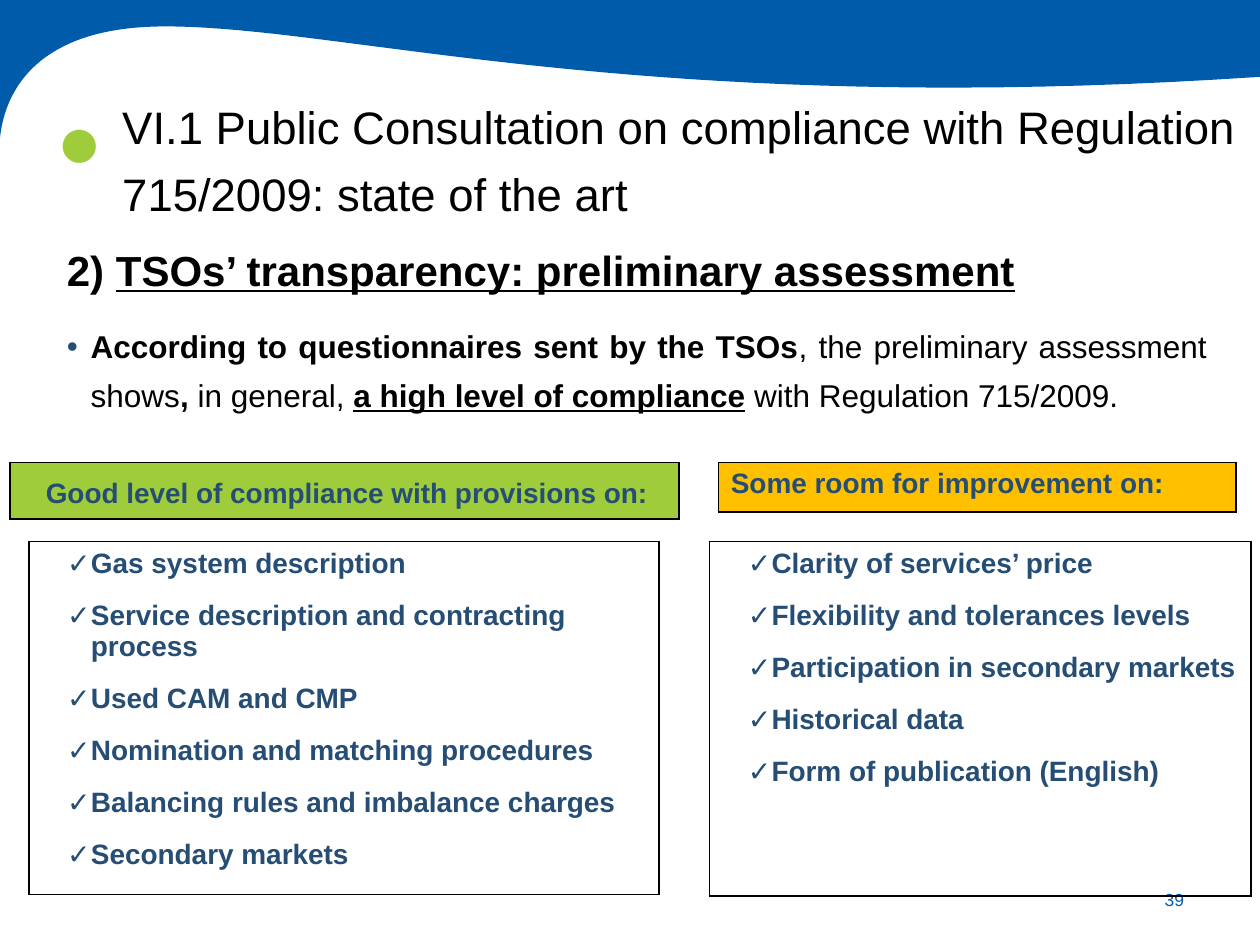
"""Build the slide on the preliminary assessment of TSOs' transparency."""
import pptx
import pptx.dml.color
import pptx.enum.text
import pptx.oxml.ns
import pptx.util
from lxml import etree

Cm = pptx.util.Cm
Pt = pptx.util.Pt
RGBColor = pptx.dml.color.RGBColor
Align = pptx.enum.text.PP_ALIGN
Anchor = pptx.enum.text.MSO_ANCHOR

BLUE = RGBColor(0x00, 0x5B, 0xAB)
NAVY = RGBColor(0x26, 0x4D, 0x74)
GREEN = RGBColor(0x9E, 0xCC, 0x3B)
AMBER = RGBColor(0xFF, 0xC0, 0x00)
BLACK = RGBColor(0x00, 0x00, 0x00)

TITLE = "VI.1 Public Consultation on compliance with Regulation 715/2009: state of the art"
PAGE_NUMBER = "39"
HEADING = [("2) ", True, False), ("TSOs’ transparency: preliminary assessment", True, True)]
STATEMENT = [
    ("According to questionnaires sent by the TSOs", True, False),
    (", the preliminary assessment shows", False, False),
    (", ", True, False),
    ("in general, ", False, False),
    ("a high level of compliance", True, True),
    (" with Regulation 715/2009.", False, False),
]
GOOD = [
    "Gas system description",
    "Service description and contracting process",
    "Used CAM and CMP",
    "Nomination and matching procedures",
    "Balancing rules and imbalance charges",
    "Secondary markets",
]
IMPROVABLE = [
    "Clarity of services’ price",
    "Flexibility and tolerances levels",
    "Participation in secondary markets",
    "Historical data",
    "Form of publication (English)",
]
HEADER_TOP, LIST_TOP = 9.32, 10.92
HEADERS = [
    ("Good level of compliance with provisions on:", GREEN, (0.2, HEADER_TOP, 13.49, 1.14),
     dict(left=1, hanging=0.53, spacing=1.3)),
    ("Some room for improvement on:", AMBER, (14.48, HEADER_TOP, 10.44, 1), {}),
]
LISTS = [
    (GOOD, (0.58, LIST_TOP, 12.7, 7.11)),
    (IMPROVABLE, (14.3, LIST_TOP, 10.92, 7.14)),
]
CURVES = [
    ((10, 0.61), (5.1, 0.94), (2.76, 0.21), (1.31, 0.21)),
    ((1.31, 0.21), (0.23, 0.21), (0.03, 0.79), (0, 1.1)),
]
CURVE_STEPS = 40


def curve_points(curve):
    for step in range(1, CURVE_STEPS + 1):
        t = step / CURVE_STEPS
        weights = ((1 - t) ** 3, 3 * t * (1 - t) ** 2, 3 * t * t * (1 - t), t ** 3)
        yield tuple(Cm(2.54 * sum(w * point[axis] for w, point in zip(weights, curve)))
                    for axis in (0, 1))


def add_element(parent, tag, **attributes):
    return etree.SubElement(parent, pptx.oxml.ns.qn(tag), attributes)


def format_paragraph(paragraph, size, color, bold=None, bullet=None, left=0, hanging=0,
                     spacing=None, before=0, after=0, align=Align.LEFT):
    properties = paragraph._p.get_or_add_pPr()
    properties.set("marL", str(Cm(left)))
    properties.set("indent", str(-Cm(hanging)))
    if bullet:
        add_element(add_element(properties, "a:buClr"), "a:srgbClr", val=str(NAVY))
        add_element(properties, "a:buFont", typeface="Arial")
        add_element(properties, "a:buChar", char=bullet)
    else:
        add_element(properties, "a:buNone")
    paragraph.alignment = align
    paragraph.line_spacing = spacing
    paragraph.space_before, paragraph.space_after = Pt(before), Pt(after)
    font = paragraph.font
    font.name, font.size, font.bold = "Arial", Pt(size), bold
    font.color.rgb = color


def add_runs(paragraph, runs):
    for text, bold, underline in runs:
        run = paragraph.add_run()
        run.text, run.font.bold, run.font.underline = text, bold, underline


def add_text_box(slide, box, anchor=Anchor.TOP, wrap=True):
    frame = slide.shapes.add_textbox(*map(Cm, box)).text_frame
    frame.word_wrap, frame.vertical_anchor = wrap, anchor
    return frame


def add_framed_cell(slide, box, fill=None):
    table = slide.shapes.add_table(1, 1, *map(Cm, box)).table
    table.first_row = table.horz_banding = False
    cell = table.cell(0, 0)
    if fill is None:
        cell.fill.background()
    else:
        cell.fill.solid()
        cell.fill.fore_color.rgb = fill
    properties = cell._tc.get_or_add_tcPr()
    for position, side in enumerate(("a:lnL", "a:lnR", "a:lnT", "a:lnB")):
        line = add_element(properties, side, w=str(Pt(1)))
        add_element(add_element(line, "a:solidFill"), "a:srgbClr", val=str(BLACK))
        properties.insert(position, line)
    return cell.text_frame


def add_banner(slide):
    builder = slide.shapes.build_freeform(0, 0)
    builder.add_line_segments([(Cm(25.4), 0), (Cm(25.4), Cm(1.55))], close=False)
    for index, curve in enumerate(CURVES):
        builder.add_line_segments(list(curve_points(curve)), close=index == len(CURVES) - 1)
    banner = builder.convert_to_shape()
    banner.shadow.inherit = False
    banner.fill.solid()
    banner.fill.fore_color.rgb = BLUE
    banner.line.fill.background()


def add_title(slide):
    title = slide.shapes.title
    title.left, title.top, title.width, title.height = map(Cm, (1.98, 1.6, 23.42, 2.9))
    frame = title.text_frame
    frame.text = TITLE
    frame.auto_size = pptx.enum.text.MSO_AUTO_SIZE.NONE
    frame.vertical_anchor = Anchor.TOP
    format_paragraph(frame.paragraphs[0], 26, BLACK, left=0.23, spacing=1.24)


def add_body(slide):
    frame = add_text_box(slide, (0.58, 4.5, 24, 3.7))
    common = dict(left=1, hanging=0.48, spacing=1.3, after=6, align=Align.JUSTIFY)
    heading = frame.paragraphs[0]
    format_paragraph(heading, 24, BLACK, **common)
    add_runs(heading, HEADING)
    statement = frame.add_paragraph()
    format_paragraph(statement, 18, BLACK, bullet="•", before=6, **common)
    add_runs(statement, STATEMENT)


def main():
    presentation = pptx.Presentation()
    presentation.slide_width, presentation.slide_height = Cm(25.4), Cm(19.05)
    slide = presentation.slides.add_slide(presentation.slide_layouts[5])
    add_banner(slide)
    add_title(slide)

    marker = add_text_box(slide, (0.89, 1.45, 1.4, 2.39), Anchor.BOTTOM, wrap=False)
    marker.text = "●"
    format_paragraph(marker.paragraphs[0], 44, GREEN, align=Align.CENTER)
    number = add_text_box(slide, (22.7, 17.63, 1.42, 1.02), Anchor.MIDDLE)
    number.text = PAGE_NUMBER
    format_paragraph(number.paragraphs[0], 10, BLUE, align=Align.RIGHT)

    add_body(slide)
    for text, fill, box, layout in HEADERS:
        frame = add_framed_cell(slide, box, fill)
        frame.text = text
        format_paragraph(frame.paragraphs[0], 16, NAVY, bold=True, **layout)
    for items, box in LISTS:
        frame = add_framed_cell(slide, box)
        frame.text = "\n".join(items)
        for index, paragraph in enumerate(frame.paragraphs):
            format_paragraph(paragraph, 16, NAVY, bold=True, bullet="✓", left=1, hanging=0.48,
                             before=6 if index else 0, after=6)
    presentation.save("out.pptx")


if __name__ == "__main__":
    main()
